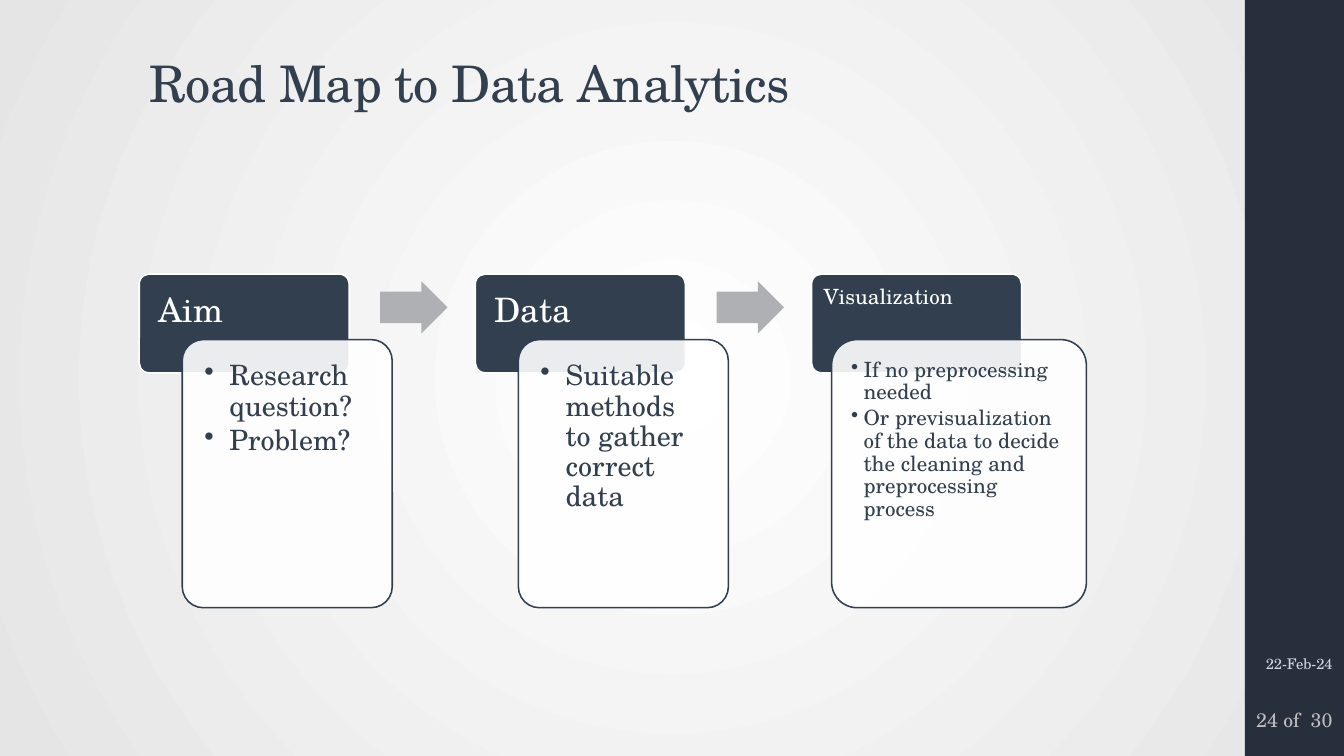
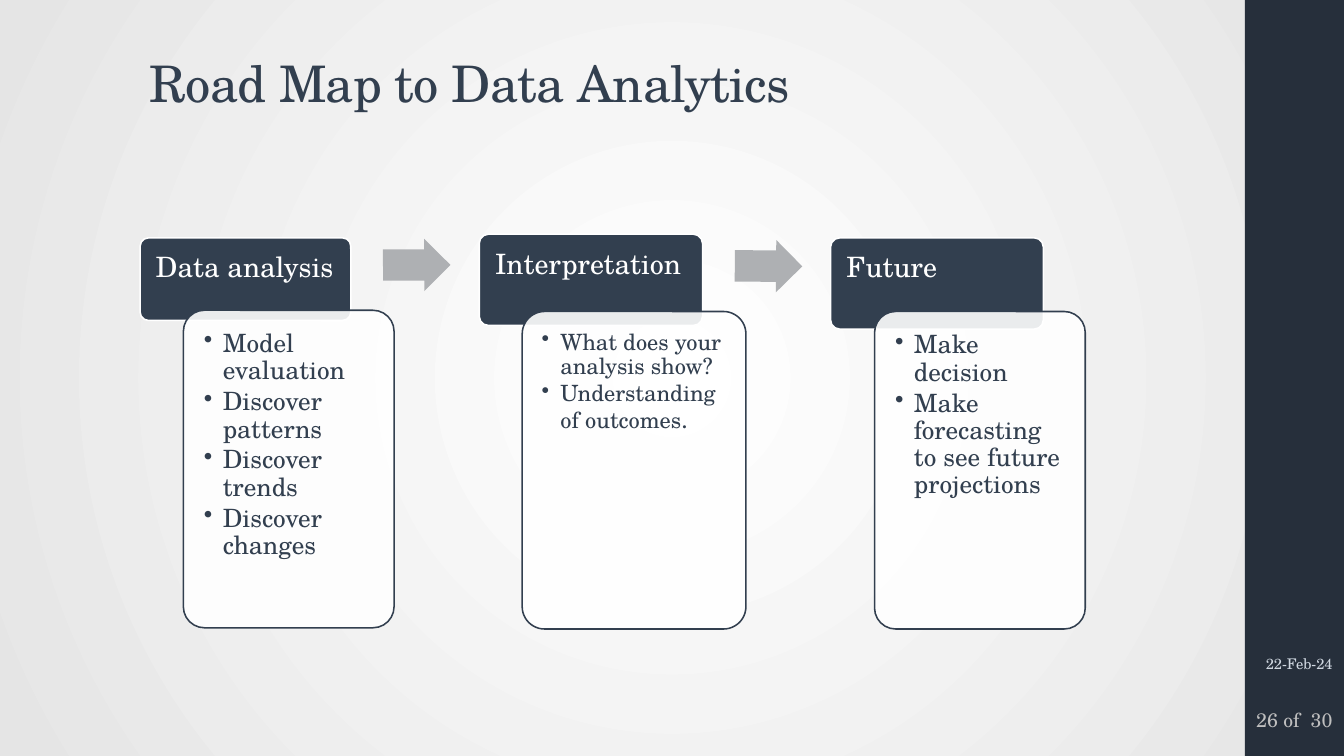
import lxml.etree
import pptx
import pptx.dml.color
import pptx.enum.shapes
import pptx.enum.text
import pptx.oxml.ns
import pptx.util

Pt = pptx.util.Pt
qn = pptx.oxml.ns.qn
SHAPE = pptx.enum.shapes.MSO_SHAPE
ALIGN = pptx.enum.text.PP_ALIGN
ANCHOR = pptx.enum.text.MSO_ANCHOR

FONT = "TeX Gyre Schola"
COLORS = {
    "white": "FFFFFF",
    "edge": "E5E5E5",
    "band": "262F3B",
    "navy": "323F4F",
    "arrow": "AEB0B3",
    "page": "BFBFBF",
    "date": "D0D8E1",
}
INSET_RATIO = 0.57
ARROW_SIZE = (48.2, 37.4)

SLIDES = [
    {
        "page": "24 of  30",
        "arrows": [(271.5, 200.9, 0), (511.9, 200.9, 0)],
        "steps": [
            {
                "heading": "Aim", "heading_size": 24, "heading_box": (99.5, 195.8, 150, 70.5),
                "card_box": (130.2, 242.6, 150, 191.5), "size": 20, "indent": 18,
                "lines": ["Research question?", "Problem?"],
            },
            {
                "heading": "Data", "heading_size": 24, "heading_box": (339.6, 195.8, 150, 70.5),
                "card_box": (370.3, 242.6, 150, 191.5), "size": 20, "indent": 18,
                "lines": ["Suitable methods to gather correct data"],
            },
            {
                "heading": "Visualization", "heading_size": 15, "heading_box": (579.7, 195.8, 150, 70.5),
                "card_box": (594, 242.6, 182, 191.5), "size": 15, "indent": 9,
                "lines": [
                    "If no preprocessing needed",
                    "Or previsualization of the data to decide the cleaning and preprocessing process",
                ],
            },
        ],
    },
    {
        "page": "26 of  30",
        "arrows": [(273.6, 170.6, -0.1), (524.9, 171.4, 0.5)],
        "steps": [
            {
                "heading": "Data analysis", "heading_size": 20, "heading_box": (100.1, 169.9, 150.5, 59),
                "card_box": (131, 221.6, 150.5, 226.8), "size": 18, "indent": 13.5,
                "lines": ["Model evaluation", "Discover patterns", "Discover trends", "Discover changes"],
            },
            {
                "heading": "Interpretation", "heading_size": 20, "heading_box": (342.3, 167.3, 159.5, 65.2),
                "card_box": (373, 222.5, 159.8, 226.8), "size": 16, "indent": 13.5,
                "lines": ["What does your analysis show?", "Understanding of outcomes"],
                "ending": (".", 18),
            },
            {
                "heading": "Future", "heading_size": 20, "heading_box": (593.3, 169.9, 152, 65.2),
                "card_box": (624.7, 222.5, 150.5, 226.8), "size": 18, "indent": 13.5,
                "lines": ["Make decision", "Make forecasting to see future projections"],
            },
        ],
    },
]


def add_block(slide, kind, box, fill, line=None):
    shape = slide.shapes.add_shape(kind, *map(Pt, box))
    shape.shadow.inherit = False
    shape.fill.solid()
    shape.fill.fore_color.rgb = pptx.dml.color.RGBColor.from_string(COLORS[fill])
    if line:
        shape.line.color.rgb = pptx.dml.color.RGBColor.from_string(COLORS[line])
        shape.line.width = Pt(1.1)
    else:
        shape.line.fill.background()
    if kind == SHAPE.ROUNDED_RECTANGLE:
        shape.adjustments[0] = 0.1
    return shape


def write(shape, lines, size, color, frame_values, paragraph_values):
    frame = shape.text_frame
    for name, value in {"word_wrap": True, **frame_values}.items():
        setattr(frame, name, value)
    for index, text in enumerate(lines):
        paragraph = frame.add_paragraph() if index else frame.paragraphs[0]
        for name, value in paragraph_values.items():
            setattr(paragraph, name, value)
        run = paragraph.add_run()
        run.text = text
        for name, value in {"name": FONT, "size": Pt(size)}.items():
            setattr(run.font, name, value)
        run.font.color.rgb = pptx.dml.color.RGBColor.from_string(COLORS[color])
    return frame.paragraphs


presentation = pptx.Presentation()
presentation.slide_width = Pt(960)
presentation.slide_height = Pt(540)

master = presentation.slide_master
background = master.background.fill
background.gradient()
for stop, position, color in zip(background.gradient_stops, (0, 1), ("white", "edge")):
    stop.position = position
    stop.color.rgb = pptx.dml.color.RGBColor.from_string(COLORS[color])
gradient = master.element.find(".//" + qn("a:gradFill"))
gradient.remove(gradient.find(qn("a:lin")))
circle = lxml.etree.SubElement(gradient, qn("a:path"))
circle.set("path", "circle")
center = lxml.etree.SubElement(circle, qn("a:fillToRect"))
for side in "ltrb":
    center.set(side, "100000")

for content in SLIDES:
    slide = presentation.slides.add_slide(presentation.slide_layouts[5])
    add_block(slide, SHAPE.RECTANGLE, (889.2, 0, 70.8, 540), "band")

    title = slide.shapes.title
    for name, value in {"left": 99.4, "top": 28.8, "width": 763.2, "height": 65.5}.items():
        setattr(title, name, Pt(value))
    paragraphs = write(
        title, ["Road Map to Data Analytics"], 36, "navy",
        {"vertical_anchor": ANCHOR.MIDDLE},
        {"alignment": ALIGN.LEFT, "line_spacing": 0.9},
    )
    paragraphs[0].runs[0].font._element.set("spc", "-50")

    for step in content["steps"]:
        size = step["heading_size"]
        heading = add_block(slide, SHAPE.ROUNDED_RECTANGLE, step["heading_box"], "navy", "white")
        inset = Pt(size * INSET_RATIO - 2)
        write(
            heading, [step["heading"]], size, "white",
            {"vertical_anchor": ANCHOR.TOP, "margin_left": inset, "margin_top": inset,
             "margin_right": Pt(4), "margin_bottom": Pt(4)},
            {"alignment": ALIGN.LEFT, "line_spacing": 0.9},
        )

        size = step["size"]
        card = add_block(slide, SHAPE.ROUNDED_RECTANGLE, step["card_box"], "white", "navy")
        card_color = card._element.spPr.find(qn("a:solidFill")).find(qn("a:srgbClr"))
        lxml.etree.SubElement(card_color, qn("a:alpha")).set("val", "90000")
        margins = {"margin_" + side: Pt(size * INSET_RATIO) for side in ("left", "top", "right", "bottom")}
        paragraphs = write(
            card, step["lines"], size, "navy",
            {"vertical_anchor": ANCHOR.TOP, **margins},
            {"level": 1, "alignment": ALIGN.LEFT, "line_spacing": 0.9, "space_after": Pt(size * 0.15)},
        )
        for paragraph in paragraphs:
            properties = paragraph._p.get_or_add_pPr()
            properties.set("marL", str(Pt(step["indent"])))
            properties.set("indent", str(-Pt(step["indent"])))
            lxml.etree.SubElement(properties, qn("a:buChar")).set("char", "•")
        if "ending" in step:
            text, size = step["ending"]
            run = paragraphs[-1].add_run()
            run.text = text
            for name, value in {"name": FONT, "size": Pt(size)}.items():
                setattr(run.font, name, value)
            run.font.color.rgb = pptx.dml.color.RGBColor.from_string(COLORS["navy"])

    for left, top, rotation in content["arrows"]:
        arrow = add_block(slide, SHAPE.RIGHT_ARROW, (left, top, *ARROW_SIZE), "arrow")
        arrow.adjustments[0] = 0.6
        arrow.adjustments[1] = 0.5
        arrow.rotation = rotation

    for text, box, size, color, alignment, margin in (
        ("22-Feb-24", (889.2, 459.4, 69.8, 28.8), 10.5, "date", ALIGN.RIGHT, 7.2),
        (content["page"], (889.2, 490.3, 70.8, 46.8), 14, "page", ALIGN.CENTER, 3.6),
    ):
        footer = slide.shapes.add_textbox(*map(Pt, box))
        write(
            footer, [text], size, color,
            {"vertical_anchor": ANCHOR.MIDDLE, "margin_left": Pt(margin), "margin_right": Pt(margin)},
            {"alignment": alignment},
        )

presentation.save("out.pptx")
